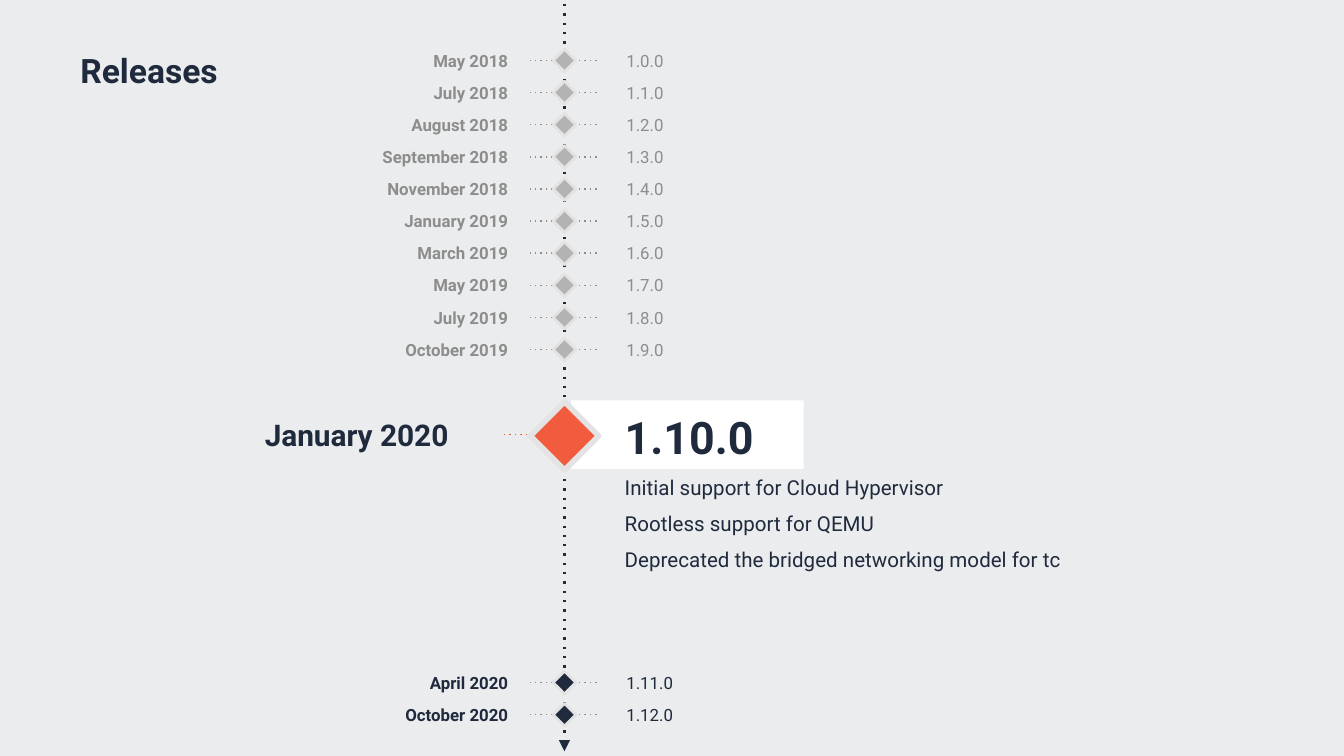
from lxml.etree import SubElement
from pptx import Presentation
from pptx.dml.color import RGBColor
from pptx.enum.shapes import MSO_CONNECTOR, MSO_SHAPE
from pptx.enum.text import MSO_ANCHOR, PP_ALIGN
from pptx.oxml.ns import qn
from pptx.util import Inches, Pt

WIDE, HIGH = 10, 5.625
AXIS = 0.42 * WIDE
ROW = 0.239
PAST = 0.08 * HIGH
NOW = 0.575 * HIGH
NEXT = 0.903 * HIGH
HUES = {"back": "EBECED", "ink": "1F2A3D", "gray": "8D8D8D", "mark": "B3B3B3",
        "edge": "E3E3E3", "hot": "F15B3E", "white": "FFFFFF"}
OLD = [("May 2018", "1.0.0"), ("July 2018", "1.1.0"), ("August 2018", "1.2.0"),
       ("September 2018", "1.3.0"), ("November 2018", "1.4.0"),
       ("January 2019", "1.5.0"), ("March 2019", "1.6.0"), ("May 2019", "1.7.0"),
       ("July 2019", "1.8.0"), ("October 2019", "1.9.0")]
NEW = [("April 2020", "1.11.0"), ("October 2020", "1.12.0")]
NOTES = ["Initial support for Cloud Hypervisor", "Rootless support for QEMU",
         "Deprecated the bridged networking model for tc"]


def hue(name):
    """Return the named colour."""
    return RGBColor.from_string(HUES[name])


def put(thing, **form):
    """Set each format value on the thing."""
    for key, value in form.items():
        setattr(thing, key, value)


def write(slide, area, lines, pad=(0.1, 0.1), left=None, **form):
    """Add a text box with one (text, size, bold, colour) entry per paragraph."""
    frame = slide.shapes.add_textbox(*map(Inches, area)).text_frame
    side, top = map(Inches, pad)
    put(frame, word_wrap=True, margin_right=side, margin_top=top, margin_bottom=top,
        margin_left=side if left is None else Inches(left),
        vertical_anchor=form.pop("anchor", MSO_ANCHOR.TOP))
    for i, (text, size, bold, tint) in enumerate(lines):
        para = frame.paragraphs[0] if i == 0 else frame.add_paragraph()
        put(para, text=text, **form)
        if i:
            para.space_before = Pt(6)
        put(para.font, name="Roboto", size=Pt(size), bold=bold)
        para.font.color.rgb = hue(tint)


def dots(slide, ends, tint, width=0.75, arrow=False):
    """Add a dotted line, with an arrowhead at its end if asked."""
    wire = slide.shapes.add_connector(MSO_CONNECTOR.STRAIGHT, *map(Inches, ends))
    wire.line.width = Pt(width)
    wire.line.color.rgb = hue(tint)
    stroke = wire.line._get_or_add_ln()
    SubElement(stroke, qn("a:prstDash"), val="dot")
    if arrow:
        SubElement(stroke, qn("a:tailEnd"), type="triangle")
    SubElement(wire._element.spPr, qn("a:effectLst"))


def block(slide, area, tint, edge=0, turn=0):
    """Add a filled rectangle, turned and edged if asked."""
    rect = slide.shapes.add_shape(MSO_SHAPE.RECTANGLE, *map(Inches, area))
    rect.shadow.inherit = False
    rect.rotation = turn
    rect.fill.solid()
    rect.fill.fore_color.rgb = hue(tint)
    if edge:
        rect.line.width = Pt(edge)
        rect.line.color.rgb = hue("edge")
    else:
        rect.line.fill.background()


def gem(slide, mid, size, tint, edge):
    """Add a diamond centred on the axis."""
    block(slide, (AXIS - size / 2, mid - size / 2, size, size), tint, edge, 45)


def entry(slide, mid, date, label, ink, mark):
    """Add one release row with date, marker and version."""
    top = mid - 0.125
    write(slide, (2.78, top, 1.04, 0.25), [(date, 9, True, ink)], (0.04, 0.05),
          alignment=PP_ALIGN.RIGHT)
    write(slide, (4.62, top, 0.55, 0.25), [(label, 9, False, ink)], (0.04, 0.05))
    dots(slide, (AXIS + 0.24, mid, AXIS - 0.26, mid), "gray")
    gem(slide, mid, 0.12, mark, 1.5)


def focus(slide):
    """Add the highlighted release with its notes."""
    dots(slide, (AXIS + 0.05, NOW, AXIS - 0.45, NOW), "hot")
    block(slide, (AXIS + 0.05, 2.98, 1.73, 0.51), "white")
    write(slide, (4.55, 2.95, 4.51, 1.87),
          [("1.10.0", 24, True, "ink")] + [(note, 11, False, "ink") for note in NOTES])
    write(slide, (1.77, 2.95, 2.08, 0.57), [("January 2020", 16, True, "ink")],
          left=0.2, anchor=MSO_ANCHOR.MIDDLE)
    gem(slide, NOW + 0.01, 0.36, "hot", 3)


def main():
    """Build and save the release timeline."""
    deck = Presentation()
    put(deck, slide_width=Inches(WIDE), slide_height=Inches(HIGH))
    slide = deck.slides.add_slide(deck.slide_layouts[6])
    slide.background.fill.solid()
    slide.background.fill.fore_color.rgb = hue("back")
    write(slide, (0.5, 0.1, 2.24, 0.84), [("Releases", 18, True, "ink")],
          anchor=MSO_ANCHOR.MIDDLE)
    dots(slide, (AXIS, 0.03, AXIS, 5.59), "ink", 1.25, True)
    for start, rows, ink, mark in ((PAST, OLD, "gray", "mark"), (NEXT, NEW, "ink", "ink")):
        for i, (date, label) in enumerate(rows):
            entry(slide, start + i * ROW, date, label, ink, mark)
    focus(slide)
    deck.save("out.pptx")


if __name__ == "__main__":
    main()
